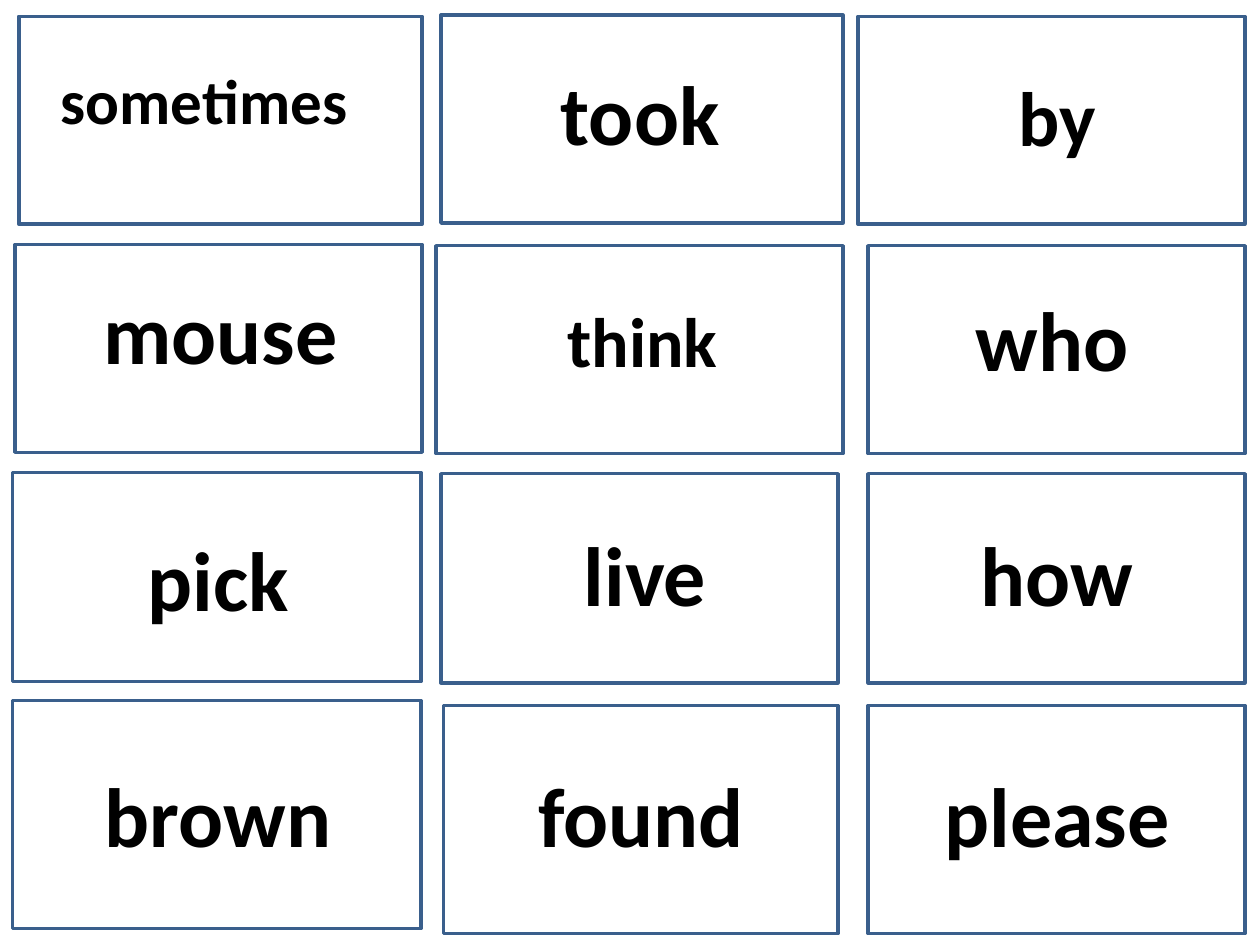
from pptx import Presentation
from pptx.dml.color import RGBColor
from pptx.enum.shapes import MSO_SHAPE as Shape
from pptx.enum.text import MSO_AUTO_SIZE as AutoSize, PP_ALIGN as Align
from pptx.util import Inches, Pt

BORDER = RGBColor(0x3A, 0x5F, 0x8C)
BLACK = RGBColor(0, 0, 0)
WORD_WIDTH = 2.68

FRAMES = [
    (0.12, 1.94, 3.23, 1.65),
    (0.1, 3.75, 3.24, 1.66),
    (0.1, 5.56, 3.24, 1.81),
    (0.15, 0.13, 3.2, 1.65),
    (3.46, 1.95, 3.23, 1.65),
    (3.5, 3.76, 3.15, 1.66),
    (3.52, 5.6, 3.13, 1.81),
    (3.5, 0.12, 3.19, 1.65),
    (6.89, 1.95, 2.99, 1.65),
    (6.89, 3.76, 2.99, 1.66),
    (6.89, 5.6, 2.99, 1.81),
    (6.81, 0.13, 3.07, 1.65),
]

WORDS = [
    ("sometimes", 0.28, 0.44, 36),
    ("pick", 0.39, 4.14, 48),
    ("brown", 0.39, 6.01, 48),
    ("mouse", 0.41, 2.18, 48),
    ("by", 7.05, 0.5, 44),
    ("think", 3.76, 2.31, 40),
    ("live", 3.78, 4.1, 48),
    ("found", 3.75, 6.01, 48),
    ("took", 3.74, 0.44, 48),
    ("who", 7.01, 2.23, 48),
    ("how", 7.05, 4.1, 48),
    ("please", 7.05, 6.01, 48),
]


def add_frame(slide, left, top, width, height):
    sp = slide.shapes.add_shape(
        Shape.RECTANGLE, Inches(left), Inches(top), Inches(width), Inches(height)
    )
    sp.shadow.inherit = False
    sp.fill.background()
    sp.line.color.rgb = BORDER
    sp.line.width = Pt(2)


def write_text(tf, text, *, size, font="Calibri", color=BLACK, bold=True, align=Align.CENTER):
    p = tf.paragraphs[0]
    p.alignment = align
    r = p.add_run()
    r.text = text
    r.font.name = font
    r.font.size = Pt(size)
    r.font.bold = bold
    r.font.color.rgb = color


def add_word(slide, text, left, top, size):
    height = 0.1 + size * 1.22 / 72
    sp = slide.shapes.add_textbox(
        Inches(left), Inches(top), Inches(WORD_WIDTH), Inches(height)
    )
    tf = sp.text_frame
    tf.word_wrap = True
    tf.auto_size = AutoSize.SHAPE_TO_FIT_TEXT
    write_text(tf, text, size=size)


def main():
    prs = Presentation()
    prs.slide_width = Inches(10)
    prs.slide_height = Inches(7.5)
    slide = prs.slides.add_slide(prs.slide_layouts[6])
    for frame in FRAMES:
        add_frame(slide, *frame)
    for word in WORDS:
        add_word(slide, *word)
    prs.save("out.pptx")


if __name__ == "__main__":
    main()
